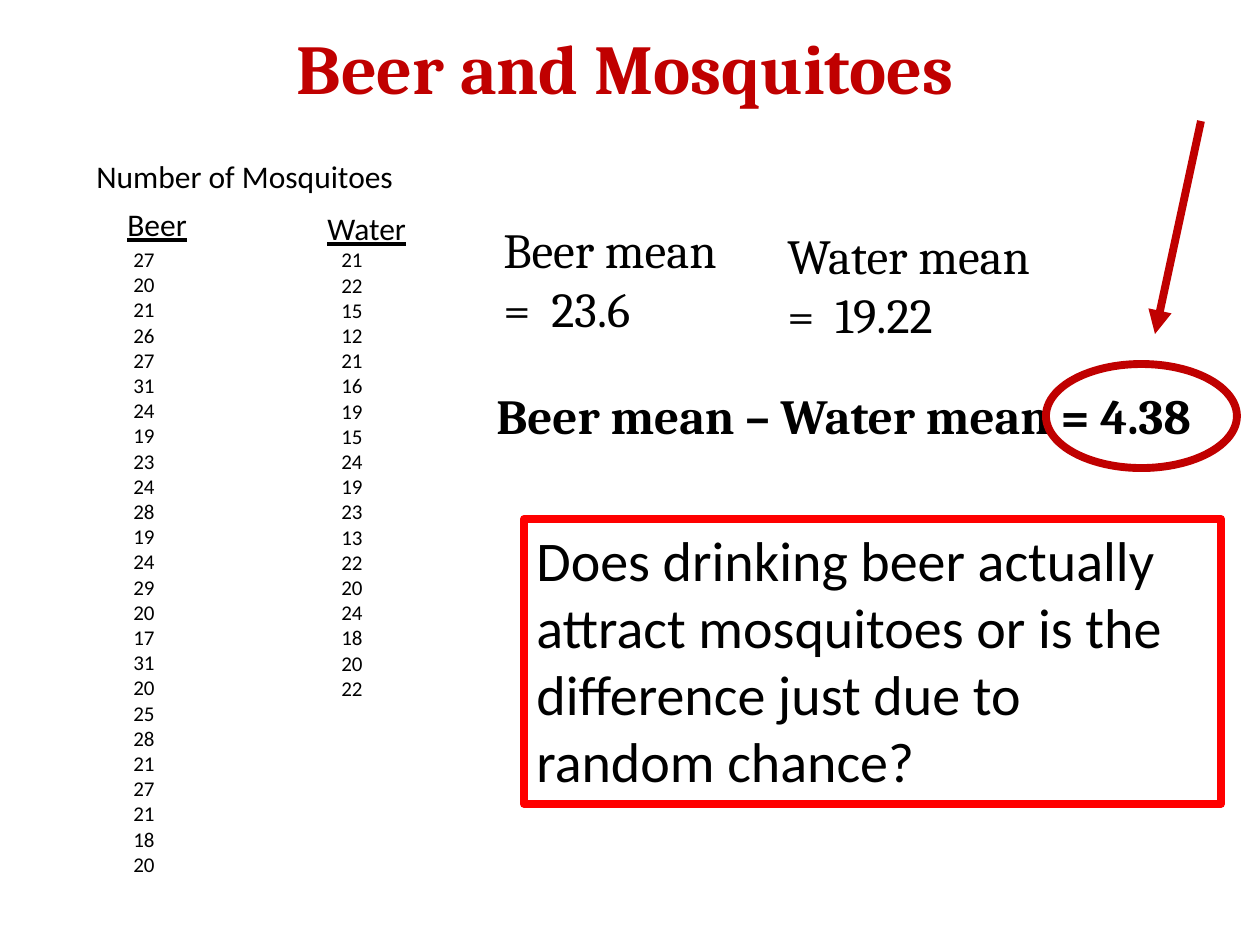
from dataclasses import dataclass

from lxml.etree import SubElement
from pptx import Presentation
from pptx.dml.color import RGBColor
from pptx.enum.shapes import MSO_CONNECTOR as Connector, MSO_SHAPE as Shape
from pptx.enum.text import MSO_ANCHOR as Anchor, PP_ALIGN as Align
from pptx.oxml.ns import qn
from pptx.util import Pt


@dataclass(frozen=True)
class Theme:
    heading: str = "Cambria"
    body: str = "Calibri"
    black: RGBColor = RGBColor(0, 0, 0)
    dark_red: RGBColor = RGBColor(0xC0, 0, 0)
    red: RGBColor = RGBColor(0xFF, 0, 0)
    title: int = 40
    question: int = 32
    mean: int = 28
    label: int = 18
    count: int = 12
    stroke: float = 4.5


THEME = Theme()
SLIDE_SIZE = (1260, 945)

# Boxes are (left, top, width, height) in px.
TITLE = ("Beer and Mosquitoes", (63, 18, 1124, 168))
MEANS = [
    (["Beer mean", "=\t23.6"], (491, 213, 275, 131)),
    (["Water mean", "=\t19.22"], (775, 219, 294, 131)),
]
MEAN_TAB = 48
DIFFERENCE = ("Beer mean – Water mean = 4.38", (484, 379, 771, 72))
QUESTION = (
    "Does drinking beer actually attract mosquitoes or is the "
    "difference just due to random chance?",
    (524, 519, 697, 285),
)
COUNTS_LABEL = ("Number of Mosquitoes", (84, 151, 387, 63))
COUNTS = [
    {
        "drink": "Water",
        "values": [21, 22, 15, 12, 21, 16, 19, 15, 24,
                   19, 23, 13, 22, 20, 24, 18, 20, 22],
        "box": (315, 203, 126, 509),
        "indents": (0, 14),
        "gap": 0,
    },
    {
        "drink": "Beer",
        "values": [27, 20, 21, 26, 27, 31, 24, 19, 23, 24, 28, 19, 24,
                   29, 20, 17, 31, 20, 25, 28, 21, 27, 21, 18, 20],
        "box": (93, 199, 149, 704),
        "indents": (22, 28),
        "gap": 2,
    },
]
ARROW = (1201, 121, 1155, 334)
RING = (1046, 364, 191, 104)


def px(length):
    return round(length * 914400 / 126)


def emu(lengths):
    return [px(length) for length in lengths]


def style(paragraph, size, face, color=THEME.black, bold=False, underline=False):
    font = paragraph.font
    font.size, font.name = Pt(size), face
    font.color.rgb = color
    font.bold, font.underline = bold, underline


def fill_text(frame, lines):
    """Write one paragraph per line, wrapped and anchored at the top."""
    frame.word_wrap = True
    frame.vertical_anchor = Anchor.TOP
    frame.text = "\n".join(lines)
    return frame.paragraphs


def add_text(slide, lines, box):
    return fill_text(slide.shapes.add_textbox(*emu(box)).text_frame, lines)


def add_outline(slide, kind, box, color):
    outline = slide.shapes.add_shape(kind, *emu(box))
    outline.shadow.inherit = False
    outline.fill.background()
    outline.line.color.rgb = color
    outline.line.width = Pt(THEME.stroke)
    return outline


def add_means(slide):
    for lines, box in MEANS:
        for paragraph in add_text(slide, lines, box):
            tabs = SubElement(paragraph._p.get_or_add_pPr(), qn("a:tabLst"))
            SubElement(tabs, qn("a:tab"), pos=str(px(MEAN_TAB)), algn="l")
            style(paragraph, THEME.mean, THEME.heading)


def add_counts(slide):
    for column in COUNTS:
        lines = [column["drink"], *map(str, column["values"])]
        header, *values = add_text(slide, lines, column["box"])
        header_indent, value_indent = column["indents"]
        header._p.get_or_add_pPr().set("marL", str(px(header_indent)))
        style(header, THEME.label, THEME.body, underline=True)
        for value in values:
            value._p.get_or_add_pPr().set("marL", str(px(value_indent)))
            style(value, THEME.count, THEME.body)
        values[0].space_before = Pt(column["gap"])


def add_arrow(slide):
    arrow = slide.shapes.add_connector(Connector.STRAIGHT, *emu(ARROW))
    arrow.line.color.rgb = THEME.dark_red
    arrow.line.width = Pt(THEME.stroke)
    SubElement(arrow.line._get_or_add_ln(), qn("a:tailEnd"), type="triangle")
    SubElement(arrow._element.spPr, qn("a:effectLst"))


def main():
    deck = Presentation()
    deck.slide_width, deck.slide_height = emu(SLIDE_SIZE)
    slide = deck.slides.add_slide(deck.slide_layouts[6])

    text, box = TITLE
    title = add_text(slide, [text], box)[0]
    title.alignment = Align.CENTER
    style(title, THEME.title, THEME.heading, THEME.dark_red, bold=True)

    add_means(slide)
    text, box = DIFFERENCE
    style(add_text(slide, [text], box)[0], THEME.mean, THEME.heading, bold=True)

    text, box = QUESTION
    panel = add_outline(slide, Shape.RECTANGLE, box, THEME.red)
    question = fill_text(panel.text_frame, [text])[0]
    question.alignment = Align.LEFT
    style(question, THEME.question, THEME.body)

    add_counts(slide)
    text, box = COUNTS_LABEL
    style(add_text(slide, [text], box)[0], THEME.label, THEME.body)

    add_arrow(slide)
    add_outline(slide, Shape.OVAL, RING, THEME.dark_red)
    deck.save("out.pptx")


if __name__ == "__main__":
    main()
